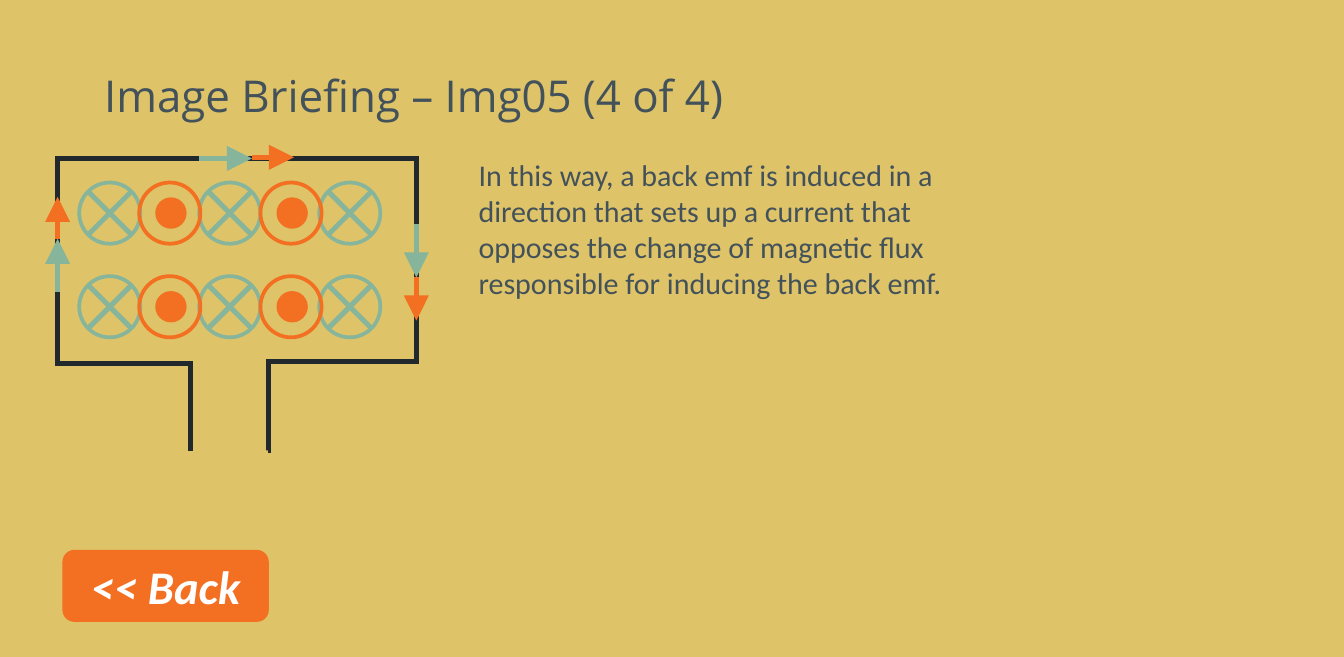
from lxml import etree
from pptx import Presentation
from pptx.dml.color import RGBColor
from pptx.enum.shapes import MSO_CONNECTOR, MSO_SHAPE
from pptx.enum.text import MSO_ANCHOR, PP_ALIGN
from pptx.oxml.ns import qn
from pptx.util import Inches, Pt

STRAIGHT = MSO_CONNECTOR.STRAIGHT
OVAL = MSO_SHAPE.OVAL
ROUNDED = MSO_SHAPE.ROUNDED_RECTANGLE
MIDDLE, TOP = MSO_ANCHOR.MIDDLE, MSO_ANCHOR.TOP
LEFT, CENTER = PP_ALIGN.LEFT, PP_ALIGN.CENTER

SAND = RGBColor(0xDE, 0xC3, 0x68)
SLATE = RGBColor(0x43, 0x52, 0x5A)
INK = RGBColor(0x22, 0x29, 0x2D)
GREEN = RGBColor(0x86, 0xB5, 0x9C)
ORANGE = RGBColor(0xF3, 0x6F, 0x21)
WHITE = RGBColor(0xFF, 0xFF, 0xFF)

# Content
TITLE = "Image Briefing – Img05 (4 of 4)"
EXPLANATION = (
    "In this way, a back emf is induced in a direction that sets up a current "
    "that opposes the change of magnetic flux responsible for inducing the back emf."
)
BACK_LABEL = "<< Back"

COIL = [(1.59, 3.76), (1.59, 3.03), (0.48, 3.03), (0.48, 1.32),
        (3.47, 1.32), (3.47, 3.01), (2.24, 3.01), (2.24, 3.75), (2.23, 3.75)]

CURRENT_ARROWS = [  # start, end, colour
    ((0.48, 2.43), (0.48, 1.99), GREEN),
    ((1.66, 1.32), (2.10, 1.32), GREEN),
    ((3.47, 1.87), (3.47, 2.31), GREEN),
    ((3.47, 2.31), (3.47, 2.67), ORANGE),
    ((2.10, 1.31), (2.45, 1.31), ORANGE),
    ((0.48, 1.99), (0.48, 1.64), ORANGE),
]

# Field symbol grid: crosses (into the page) alternate with dots (out of it)
ROW_TOPS = [1.52, 2.3]
CROSS_LEFTS = [0.66 + i for i in range(3)]
DOT_LEFTS = [1.16 + 1.01 * i for i in range(2)]
RING = 0.51
CROSS_INSET = 0.07
DOT = 0.23
DOT_INSET = 0.15

presentation = Presentation()
presentation.slide_width = Inches(11.2)
presentation.slide_height = Inches(394 / 72)
slide = presentation.slides.add_slide(presentation.slide_layouts[6])
slide.background.fill.solid()
slide.background.fill.fore_color.rgb = SAND


def write(shape, text, font, size, color, anchor=TOP, align=LEFT,
          strong=False, spacing=1.0):
    frame = shape.text_frame
    frame.word_wrap = True
    frame.vertical_anchor = anchor
    paragraph = frame.paragraphs[0]
    paragraph.alignment = align
    paragraph.line_spacing = spacing
    run = paragraph.add_run()
    run.text = text
    run.font.name = font
    run.font.size = Pt(size)
    run.font.color.rgb = color
    run.font.bold = run.font.italic = strong


def add_text(box, *style, **options):
    write(slide.shapes.add_textbox(*map(Inches, box)), *style, **options)


def set_line(shape, color, width):
    shape.line.color.rgb = color
    shape.line.width = Pt(width)


def add_circle(shapes, left, top, size, color, filled=False):
    circle = shapes.add_shape(OVAL, *map(Inches, (left, top, size, size)))
    circle.shadow.inherit = False
    if filled:
        circle.fill.solid()
        circle.fill.fore_color.rgb = color
    else:
        circle.fill.background()
    set_line(circle, color, 2.25)


def add_line(shapes, start, end, color):
    line = shapes.add_connector(STRAIGHT, *map(Inches, (*start, *end)))
    set_line(line, color, 3)
    etree.SubElement(line._element.spPr, qn("a:effectLst"))
    return line


def add_cross(left, top):
    shapes = slide.shapes.add_group_shape().shapes
    add_circle(shapes, left, top, RING, GREEN)
    x1, y1 = left + CROSS_INSET, top + CROSS_INSET
    x2, y2 = left + RING - CROSS_INSET, top + RING - CROSS_INSET
    add_line(shapes, (x1, y1), (x2, y2), GREEN)
    add_line(shapes, (x2, y1), (x1, y2), GREEN)


def add_dot(left, top):
    shapes = slide.shapes.add_group_shape().shapes
    add_circle(shapes, left, top, RING, ORANGE)
    add_circle(shapes, left + DOT_INSET, top + RING / 2 - DOT / 2, DOT, ORANGE, True)


# Title and explanation
add_text((0.77, 0.29, 9.66, 1.06), TITLE, "Open Sans", 26.3, SLATE,
         anchor=MIDDLE, spacing=0.9)
add_text((3.89, 1.25, 4.1, 1.31), EXPLANATION, "Calibri", 18, SLATE)

# Coil outline
corners = [(Inches(x), Inches(y)) for x, y in COIL]
outline = slide.shapes.build_freeform(*corners[0], scale=1.0)
outline.add_line_segments(corners[1:], close=False)
coil = outline.convert_to_shape()
coil.shadow.inherit = False
coil.fill.background()
set_line(coil, INK, 3)
etree.SubElement(coil.line._get_or_add_ln(), qn("a:miter"), lim="800000")

# Magnetic field
for add_symbol, lefts in ((add_cross, CROSS_LEFTS), (add_dot, DOT_LEFTS)):
    for top in ROW_TOPS:
        for left in lefts:
            add_symbol(left, top)

# Current arrows
for start, end, color in CURRENT_ARROWS:
    arrow = add_line(slide.shapes, start, end, color)
    etree.SubElement(arrow.line._get_or_add_ln(), qn("a:tailEnd"),
                     type="triangle", w="lg", len="lg")

# Back button
button = slide.shapes.add_shape(ROUNDED, *map(Inches, (0.52, 4.58, 1.72, 0.6)))
button.shadow.inherit = False
button.fill.solid()
button.fill.fore_color.rgb = ORANGE
button.line.fill.background()
write(button, BACK_LABEL, "Calibri", 28, WHITE, MIDDLE, CENTER, strong=True)

presentation.save("out.pptx")
